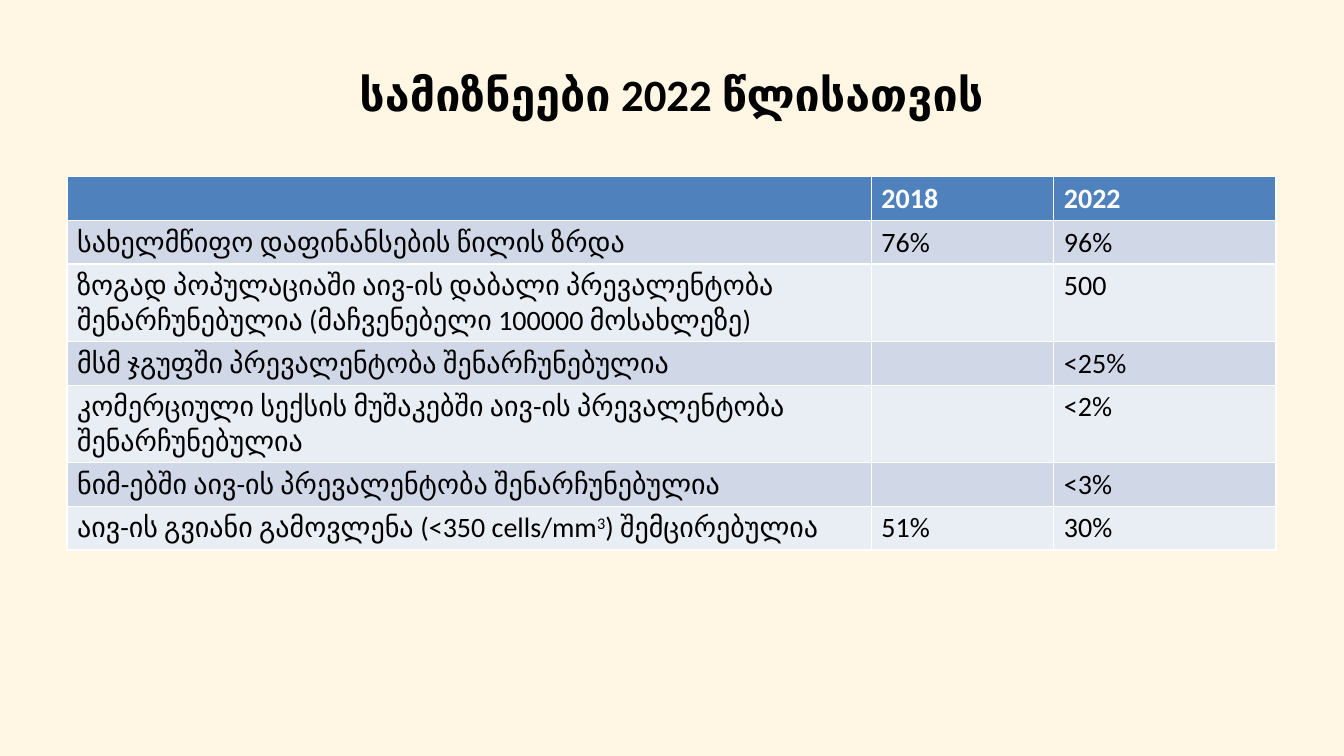
"""Build a slide with a table of targets for 2022."""
import dataclasses

import pptx
import pptx.dml.color
import pptx.enum.text
import pptx.util

Cm = pptx.util.Cm
Pt = pptx.util.Pt
Color = pptx.dml.color.RGBColor.from_string


@dataclasses.dataclass(frozen=True)
class Theme:
    font: str = "Calibri"
    background: str = "FFF6E3"
    text: str = "000000"
    header_text: str = "FFFFFF"
    header_fill: str = "4F81BD"
    band_fills: tuple = ("E9EDF4", "D0D8E8")
    title_size: int = 32
    table_size: int = 20


theme = Theme()


def format_runs(paragraph, size, color, bold):
    for run in paragraph.runs:
        run.font.name = theme.font
        run.font.size = Pt(size)
        run.font.bold = bold
        run.font.color.rgb = Color(color)


presentation = pptx.Presentation()
presentation.slide_width = Cm(33.87)
presentation.slide_height = Cm(19.05)
slide = presentation.slides.add_slide(presentation.slide_layouts[6])
slide.background.fill.solid()
slide.background.fill.fore_color.rgb = Color(theme.background)

title = slide.shapes.add_textbox(Cm(1.69), Cm(0.76), Cm(30.48), Cm(3.18))
title.text_frame.word_wrap = True
title.text_frame.vertical_anchor = pptx.enum.text.MSO_ANCHOR.MIDDLE
title.text_frame.text = "სამიზნეები 2022 წლისათვის"
title_paragraph = title.text_frame.paragraphs[0]
title_paragraph.alignment = pptx.enum.text.PP_ALIGN.CENTER
format_runs(title_paragraph, theme.title_size, theme.text, True)

rows = [
    ("", "2018", "2022"),
    ("სახელმწიფო დაფინანსების წილის ზრდა", "76%", "96%"),
    ("ზოგად პოპულაციაში აივ-ის დაბალი პრევალენტობა შენარჩუნებულია "
     "(მაჩვენებელი 100000 მოსახლეზე)", "", "500"),
    ("მსმ ჯგუფში პრევალენტობა შენარჩუნებულია", "", "<25%"),
    ("კომერციული სექსის მუშაკებში აივ-ის პრევალენტობა შენარჩუნებულია", "", "<2%"),
    ("ნიმ-ებში აივ-ის პრევალენტობა შენარჩუნებულია", "", "<3%"),
    ("აივ-ის გვიანი გამოვლენა (<350 cells/mm^3^) შემცირებულია", "51%", "30%"),
]
column_widths = [20.27, 4.6, 5.6]
row_height = 1.04

table = slide.shapes.add_table(
    len(rows), len(column_widths), Cm(1.69), Cm(4.45),
    Cm(sum(column_widths)), Cm(row_height * len(rows)),
).table
for column, width in zip(table.columns, column_widths):
    column.width = Cm(width)

for row_index, row in enumerate(rows):
    is_header = row_index == 0
    fill = theme.header_fill if is_header else theme.band_fills[row_index % 2]
    color = theme.header_text if is_header else theme.text
    for column_index, text in enumerate(row):
        cell = table.cell(row_index, column_index)
        cell.fill.solid()
        cell.fill.fore_color.rgb = Color(fill)
        paragraph = cell.text_frame.paragraphs[0]
        if not text:
            paragraph.font.size = Pt(theme.table_size)
            continue
        for part_index, part in enumerate(text.split("^")):
            run = paragraph.add_run()
            run.text = part
            if part_index % 2:
                run.font._element.set("baseline", "30000")
        format_runs(paragraph, theme.table_size, color, is_header)

presentation.save("out.pptx")
